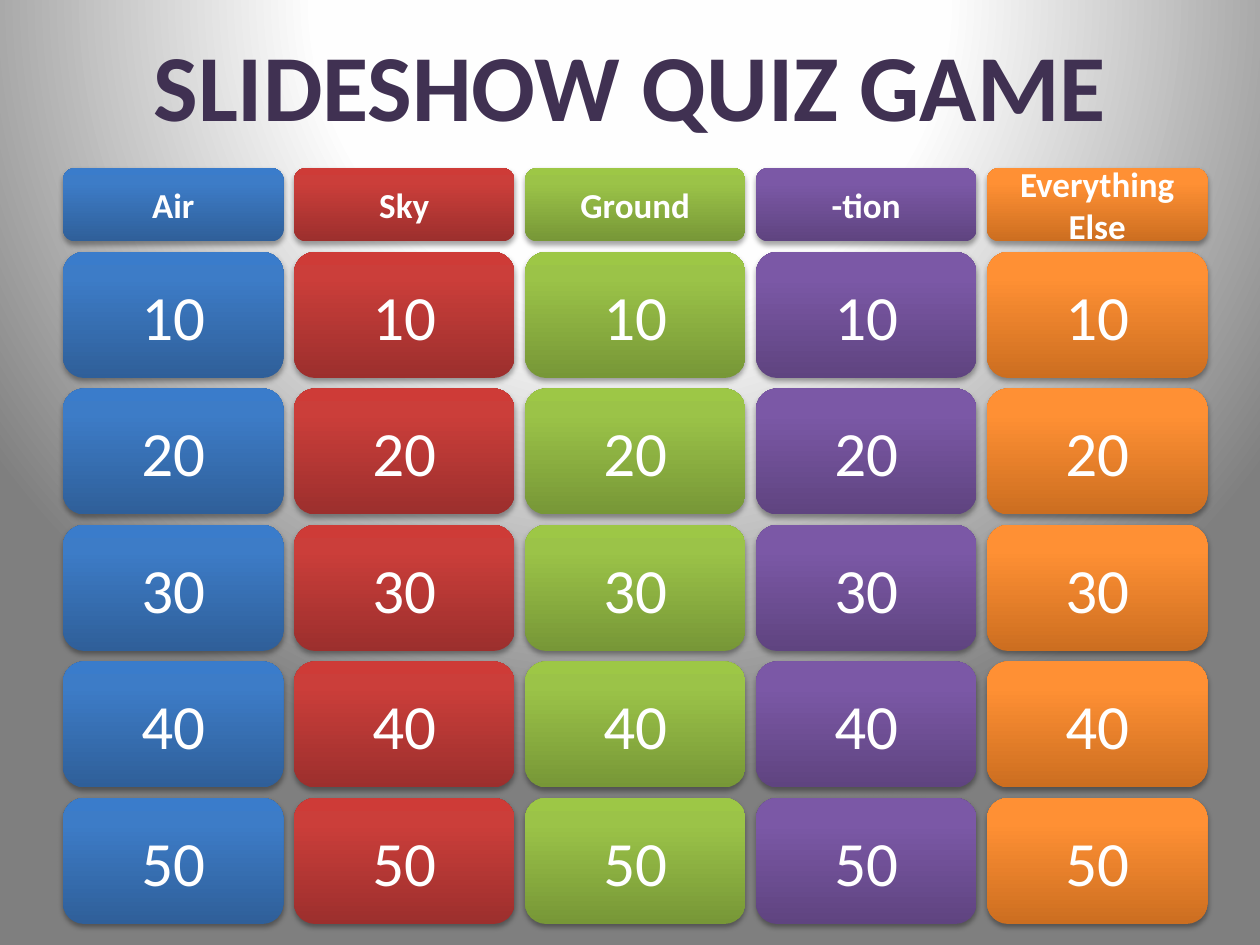
from lxml.etree import SubElement
from pptx import Presentation
from pptx.dml.color import RGBColor
from pptx.enum.shapes import MSO_SHAPE
from pptx.enum.text import MSO_ANCHOR, PP_ALIGN
from pptx.oxml import parse_xml
from pptx.oxml.ns import nsdecls, qn
from pptx.util import Pt

PX = 7620  # EMU in one px, 120 px to the inch
LEFT, COLUMN_STEP, TILE_WIDTH = 60, 220, 210
HEADER_TOP, HEADER_HEIGHT = 160, 70
TILE_TOP, ROW_STEP, TILE_HEIGHT = 240, 130, 120

COLORS = {"title": "403152", "text": "FFFFFF", "shadow": "000000"}
BACKDROP = [(0, "FFFFFF"), (40, "FEFEFE"), (100, "7F7F7F")]
SPOTLIGHT = ('<a:path path="circle"><a:fillToRect l="50000" t="-80000" '
             'r="50000" b="180000"/></a:path>')
UPWARD = '<a:lin ang="16200000" scaled="0"/>'

# Each category's gradient runs from the bottom of a tile to its top.
CATEGORIES = [
    ("Air", [(0, "2F5F99"), (80, "3D7CC7"), (100, "3A7CCB")]),
    ("Sky", [(0, "9C2F2D"), (80, "CB3E3A"), (100, "CE3B37")]),
    ("Ground", [(0, "779737"), (80, "9BC348"), (100, "9DC746")]),
    ("-tion", [(0, "5F4480"), (80, "7B58A6"), (100, "7C57A8")]),
    ("Everything Else", [(0, "CC6E20"), (80, "FF9034"), (100, "FF9136")]),
]
POINTS = [10, 20, 30, 40, 50]


def set_gradient(fill, parent, stops, direction):
    """Give the fill held by the XML element parent a gradient of any stops."""
    fill.background()
    gs = "".join(f'<a:gs pos="{pos * 1000}"><a:srgbClr val="{color}"/></a:gs>'
                 for pos, color in stops)
    gradient = parse_xml(f'<a:gradFill {nsdecls("a")} rotWithShape="1">'
                         f'<a:gsLst>{gs}</a:gsLst>{direction}</a:gradFill>')
    parent.replace(parent.find(qn("a:noFill")), gradient)


def set_shadow(sp):
    sp.shadow.inherit = False
    effects = sp._element.spPr.find(qn("a:effectLst"))
    shadow = SubElement(effects, qn("a:outerShdw"), blurRad="40000",
                        dist="23000", dir="5400000", rotWithShape="0")
    color = SubElement(shadow, qn("a:srgbClr"), val=COLORS["shadow"])
    SubElement(color, qn("a:alpha"), val="35000")


def set_text(sp, text, size, color="text", bold=False):
    tf = sp.text_frame
    tf.word_wrap = True
    tf.vertical_anchor = MSO_ANCHOR.MIDDLE
    p = tf.paragraphs[0]
    p.alignment = PP_ALIGN.CENTER
    r = p.add_run()
    r.text = text
    r.font.name = "Calibri"
    r.font.size = Pt(size)
    r.font.bold = bold
    r.font.color.rgb = RGBColor.from_string(COLORS[color])


def set_background(s):
    fill = s.background.fill
    bg_pr = s._element.cSld.find(qn("p:bg")).find(qn("p:bgPr"))
    set_gradient(fill, bg_pr, BACKDROP, SPOTLIGHT)


def add_title(s, text):
    title = s.shapes.title
    title.left, title.top = LEFT * PX, 0
    title.width, title.height = 1080 * PX, 160 * PX
    set_text(title, text, 54, color="title", bold=True)


def add_tile(s, left, top, height, stops, text, **text_format):
    sp = s.shapes.add_shape(MSO_SHAPE.ROUNDED_RECTANGLE, left * PX, top * PX,
                            TILE_WIDTH * PX, height * PX)
    set_gradient(sp.fill, sp._element.spPr, stops, UPWARD)
    sp.line.fill.background()
    set_shadow(sp)
    set_text(sp, text, **text_format)


def add_category(s, column, name, stops):
    """Add one column: the category's header and its point tiles."""
    left = LEFT + column * COLUMN_STEP
    add_tile(s, left, HEADER_TOP, HEADER_HEIGHT, stops, name, size=20, bold=True)
    for row, points in enumerate(POINTS):
        add_tile(s, left, TILE_TOP + row * ROW_STEP, TILE_HEIGHT, stops,
                 str(points), size=36)


def main():
    prs = Presentation()
    prs.slide_width, prs.slide_height = 1200 * PX, 900 * PX
    s = prs.slides.add_slide(prs.slide_layouts[5])
    set_background(s)
    add_title(s, "SLIDESHOW QUIZ GAME")
    for column, (name, stops) in enumerate(CATEGORIES):
        add_category(s, column, name, stops)
    prs.save("out.pptx")


if __name__ == "__main__":
    main()
